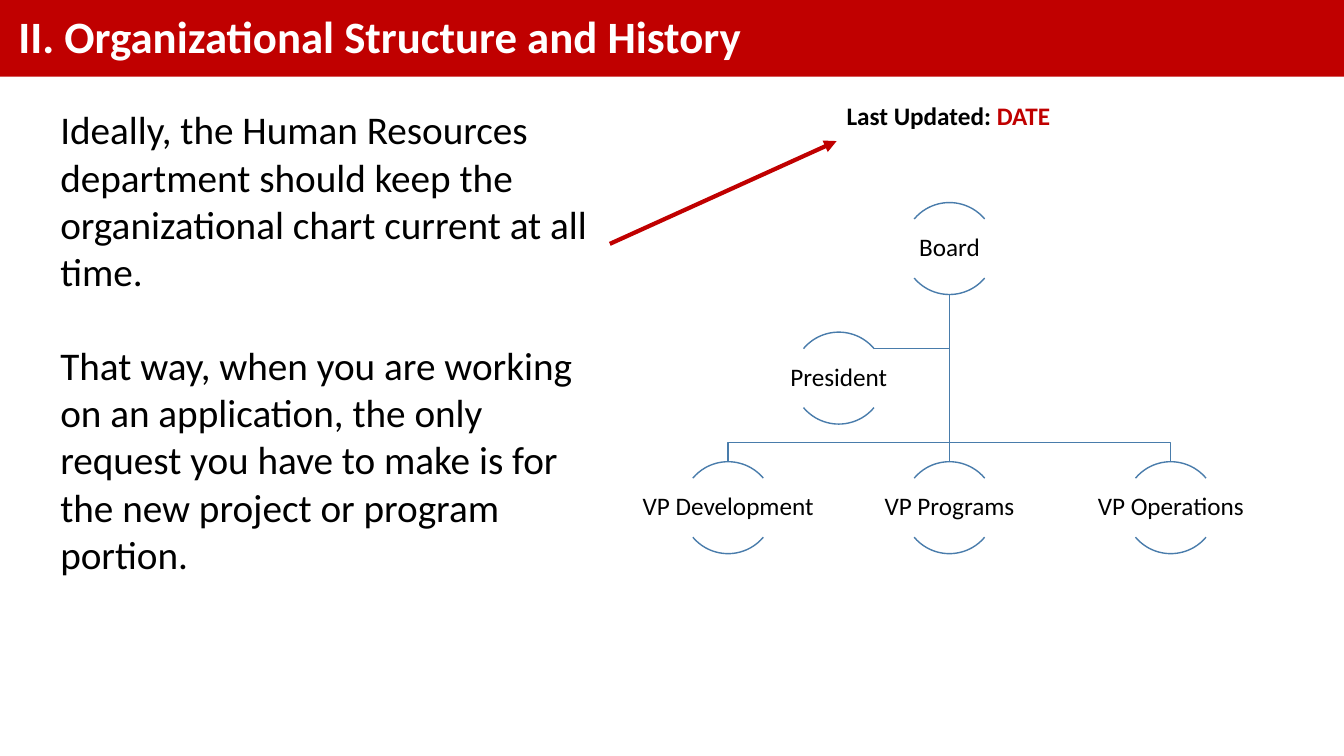
from math import cos, sin, radians
from lxml.etree import SubElement
from pptx import Presentation
from pptx.dml.color import RGBColor
from pptx.enum.shapes import MSO_CONNECTOR, MSO_SHAPE
from pptx.enum.text import MSO_ANCHOR, MSO_AUTO_SIZE, PP_ALIGN
from pptx.oxml.ns import qn
from pptx.util import Pt

TITLE = "II. Organizational Structure and History"
BODY = [
    "Ideally, the Human Resources department should keep the organizational chart current at all time.",
    "That way, when you are working on an application, the only request you have to make is for the new project or program portion.",
]
STAMP = [("Last Updated: ", "000000"), ("DATE", "C00000")]
ROLES = [
    ("Board", 0, 0),
    ("President", -0.5, 1),
    ("VP Development", -1, 2),
    ("VP Programs", 0, 2),
    ("VP Operations", 1, 2),
]
RED, BLUE, BLACK, WHITE = "C00000", "497CAB", "000000", "FFFFFF"
MID, TOP = 678.2, 144.7
COL, ROW = 158.1, 92.55
SIZE = 65.7
LABEL_W, LABEL_H = 130.3, 41.8
ARCS = [(132, 192), (24, 84)]

deck = Presentation()
deck.slide_width, deck.slide_height = Pt(960), Pt(540)
slide = deck.slides.add_slide(deck.slide_layouts[5])
shapes = slide.shapes


def paint(hue):
    return RGBColor.from_string(hue)


def style(run, size, hue, bold=False):
    font = run.font
    font.name, font.size, font.bold = "Calibri", Pt(size), bold
    font.color.rgb = paint(hue)


def outline(shape, hue=BLUE, width=1):
    shape.line.color.rgb = paint(hue)
    shape.line.width = Pt(width)


def text_box(x, y, w, h):
    return shapes.add_textbox(Pt(x), Pt(y), Pt(w), Pt(h)).text_frame


def straight(x1, y1, x2, y2, hue=BLUE, width=1):
    line = shapes.add_connector(MSO_CONNECTOR.STRAIGHT, Pt(x1), Pt(y1), Pt(x2), Pt(y2))
    outline(line, hue, width)
    SubElement(line._element.spPr, qn("a:effectLst"))
    return line


def elbow(*points):
    start, *rest = [(Pt(x), Pt(y)) for x, y in points]
    path = shapes.build_freeform(*start)
    path.add_line_segments(rest, close=False)
    shape = path.convert_to_shape()
    shape.shadow.inherit = False
    shape.fill.background()
    outline(shape)


def node(name, col, row):
    x, y = MID + col * COL, TOP + row * ROW
    for ends in ARCS:
        arc = shapes.add_shape(MSO_SHAPE.ARC, Pt(x - SIZE / 2), Pt(y), Pt(SIZE), Pt(SIZE))
        arc.adjustments[0], arc.adjustments[1] = ends
        arc.shadow.inherit = False
        arc.fill.background()
        outline(arc)
    frame = text_box(x - LABEL_W / 2, y + (SIZE - LABEL_H) / 2, LABEL_W, LABEL_H)
    frame.word_wrap = True
    frame.vertical_anchor = MSO_ANCHOR.MIDDLE
    frame.margin_left = frame.margin_right = Pt(0.9)
    frame.margin_top = frame.margin_bottom = Pt(0.9)
    frame.text = name
    para = frame.paragraphs[0]
    para.alignment, para.line_spacing = PP_ALIGN.CENTER, 0.9
    style(para.runs[0], 18, BLACK)


bar = shapes.add_shape(MSO_SHAPE.RECTANGLE, 0, 0, deck.slide_width, Pt(54.7))
bar.shadow.inherit = False
bar.fill.solid()
bar.fill.fore_color.rgb = paint(RED)
bar.line.fill.background()

title = shapes.title
bar._element.addnext(title._element)
title.left, title.top, title.width, title.height = Pt(6), Pt(12), Pt(935), Pt(32.4)
frame = title.text_frame
frame.text = TITLE
frame.auto_size = MSO_AUTO_SIZE.NONE
frame.vertical_anchor = MSO_ANCHOR.MIDDLE
para = frame.paragraphs[0]
para.alignment, para.line_spacing = PP_ALIGN.LEFT, 0.9
style(para.runs[0], 32, WHITE, True)

frame = text_box(36, 72, 391.7, 346.3)
frame.word_wrap = True
frame.text = "\n".join(BODY)
for para in frame.paragraphs:
    style(para.runs[0], 28, BLACK)
frame.paragraphs[1].space_before = Pt(34)

base = TOP + SIZE
leaf = TOP + 2 * ROW
bend = leaf - 13.7
turn = radians(40)
side = MID - COL / 2 + SIZE / 2 * cos(turn)
join = TOP + ROW + SIZE / 2 * (1 - sin(turn))
elbow((MID, base), (MID, join), (side, join))
for step in (-COL, COL):
    elbow((MID, base), (MID, bend), (MID + step, bend), (MID + step, leaf))
straight(MID, base, MID, leaf)
for role in ROLES:
    node(*role)

frame = text_box(597.6, 68.4, 161.3, 28.8)
frame.word_wrap = False
para = frame.paragraphs[0]
for words, hue in STAMP:
    run = para.add_run()
    run.text = words
    style(run, 18, hue, True)

arrow = straight(435.6, 174.2, 597.6, 100.8, RED, 3)
SubElement(arrow.line._get_or_add_ln(), qn("a:tailEnd"), type="triangle")

deck.save("out.pptx")
